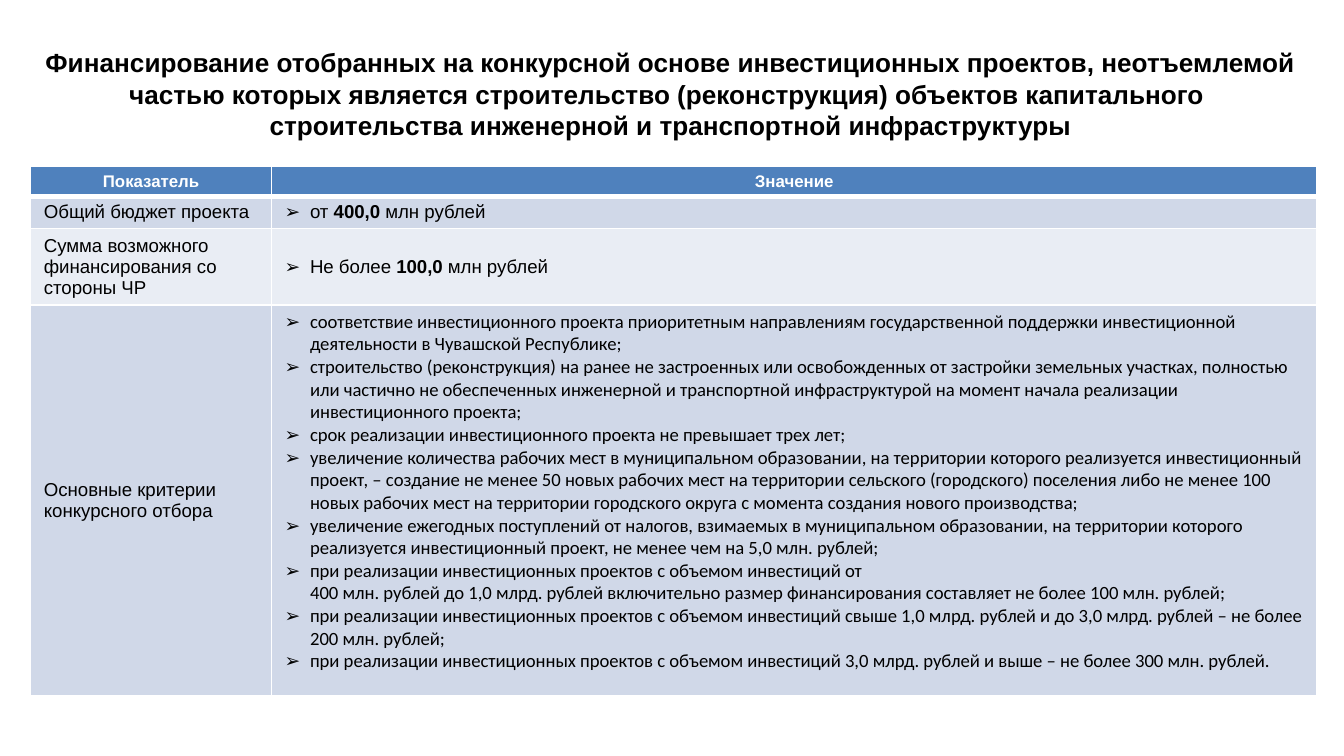
from lxml import etree
from pptx import Presentation
from pptx.dml.color import RGBColor
from pptx.enum.text import MSO_ANCHOR as Anchor, MSO_AUTO_SIZE as AutoSize, PP_ALIGN as Align
from pptx.oxml.ns import qn
from pptx.util import Cm, Pt

COLORS = {
    "black": "000000",
    "white": "FFFFFF",
    "header": "4F81BD",
    "band_dark": "D0D8E8",
    "band_light": "E9EDF4",
}

TITLE = [
    "Финансирование отобранных на конкурсной основе инвестиционных проектов, неотъемлемой "
    "частью которых является строительство (реконструкция) объектов капитального ",
    "строительства инженерной и транспортной инфраструктуры",
]
HEADERS = ["Показатель", "Значение"]
LABELS = [
    "Общий бюджет проекта",
    "Сумма возможного финансирования со стороны ЧР",
    "Основные критерии конкурсного отбора",
]
AMOUNTS = [
    [("от ", False), ("400,0 ", True), ("млн рублей", False)],
    [("Не более ", False), ("100,0", True), (" млн рублей", False)],
]
CRITERIA = [
    "соответствие инвестиционного проекта приоритетным направлениям государственной "
    "поддержки инвестиционной деятельности в Чувашской Республике;",
    "строительство (реконструкция) на ранее не застроенных или освобожденных от застройки "
    "земельных участках, полностью или частично не обеспеченных инженерной и транспортной "
    "инфраструктурой на момент начала реализации инвестиционного проекта;",
    "срок реализации инвестиционного проекта не превышает трех лет;",
    "увеличение количества рабочих мест в муниципальном образовании, на территории которого "
    "реализуется инвестиционный проект, – создание не менее 50 новых рабочих мест на "
    "территории сельского (городского) поселения либо не менее 100 новых рабочих мест на "
    "территории городского округа с момента создания нового производства;",
    "увеличение ежегодных поступлений от налогов, взимаемых в муниципальном образовании, "
    "на территории которого реализуется инвестиционный проект, не менее чем на 5,0 млн. рублей;",
    "при реализации инвестиционных проектов с объемом инвестиций от \n"
    "400 млн. рублей до 1,0 млрд. рублей включительно размер финансирования составляет "
    "не более 100 млн. рублей;",
    "при реализации инвестиционных проектов с объемом инвестиций свыше 1,0 млрд. рублей "
    "и до 3,0 млрд. рублей – не более 200 млн. рублей;",
    "при реализации инвестиционных проектов с объемом инвестиций 3,0 млрд. рублей и выше "
    "– не более 300 млн. рублей.",
]
COL_WIDTHS = [4.55, 19.76]
ROW_HEIGHTS = [0.56, 0.61, 1.45, 7.39]


def rgb(name):
    return RGBColor.from_string(COLORS[name])


def add_run(p, text, size, bold=False, color="black", font="Arial"):
    for i, line in enumerate(text.split("\n")):
        if i:
            p.add_line_break()
        r = p.add_run()
        r.text = line
        r.font.name = font
        r.font.size = Pt(size)
        r.font.bold = bold
        r.font.color.rgb = rgb(color)


def add_bullet(p):
    pPr = p._p.get_or_add_pPr()
    pPr.set("marL", str(Cm(0.48)))
    pPr.set("indent", str(-Cm(0.48)))
    etree.SubElement(pPr, qn("a:buFont")).set("typeface", "Arial")
    etree.SubElement(pPr, qn("a:buChar")).set("char", "➢")


def set_borders(cell, top=1, bottom=1):
    tcPr = cell._tc.get_or_add_tcPr()
    widths = {"a:lnL": 1, "a:lnR": 1, "a:lnT": top, "a:lnB": bottom}
    for i, (tag, width) in enumerate(widths.items()):
        ln = etree.Element(qn(tag), w=str(Pt(width)))
        fill = etree.SubElement(ln, qn("a:solidFill"))
        etree.SubElement(fill, qn("a:srgbClr")).set("val", COLORS["white"])
        tcPr.insert(i, ln)


def format_cell(cell, row):
    cell.fill.solid()
    cell.fill.fore_color.rgb = rgb(["header", "band_dark", "band_light", "band_dark"][row])
    cell.vertical_anchor = Anchor.MIDDLE
    cell.margin_left = cell.margin_right = Cm(0.25)
    cell.margin_top = cell.margin_bottom = Cm(0.1)
    set_borders(cell, top=3 if row == 1 else 1, bottom=3 if row == 0 else 1)


def fill_list(cell, items, font="Arial"):
    tf = cell.text_frame
    for i, runs in enumerate(items):
        p = tf.add_paragraph() if i else tf.paragraphs[0]
        add_bullet(p)
        for text, bold in runs:
            add_run(p, text, 10, bold, font=font)


def add_title(s):
    title = s.shapes.title
    title.left, title.top = Cm(0.51), Cm(0.74)
    title.width, title.height = Cm(24.33), Cm(2.06)
    tf = title.text_frame
    tf.word_wrap = True
    tf.auto_size = AutoSize.NONE
    tf.vertical_anchor = Anchor.MIDDLE
    for i, text in enumerate(TITLE):
        p = tf.add_paragraph() if i else tf.paragraphs[0]
        p.alignment = Align.CENTER
        add_run(p, text, 14, True)


def add_criteria_table(s):
    table = s.shapes.add_table(
        len(ROW_HEIGHTS), len(COL_WIDTHS), Cm(0.58), Cm(3.15),
        Cm(sum(COL_WIDTHS)), Cm(sum(ROW_HEIGHTS)),
    ).table
    for col, width in zip(table.columns, COL_WIDTHS):
        col.width = Cm(width)
    for i, (row, height) in enumerate(zip(table.rows, ROW_HEIGHTS)):
        row.height = Cm(height)
        for cell in row.cells:
            format_cell(cell, i)
    for i, text in enumerate(HEADERS):
        p = table.cell(0, i).text_frame.paragraphs[0]
        p.alignment = Align.CENTER
        add_run(p, text, 9, True, "white")
    for i, text in enumerate(LABELS, 1):
        add_run(table.cell(i, 0).text_frame.paragraphs[0], text, 10)
    for i, runs in enumerate(AMOUNTS, 1):
        fill_list(table.cell(i, 1), [runs])
    criteria = table.cell(3, 1)
    criteria.vertical_anchor = Anchor.TOP
    fill_list(criteria, [[(text, False)] for text in CRITERIA], "Calibri")


def main():
    prs = Presentation()
    prs.slide_width, prs.slide_height = Cm(25.4), Cm(14.29)
    s = prs.slides.add_slide(prs.slide_layouts[5])
    add_title(s)
    add_criteria_table(s)
    prs.save("out.pptx")


if __name__ == "__main__":
    main()
